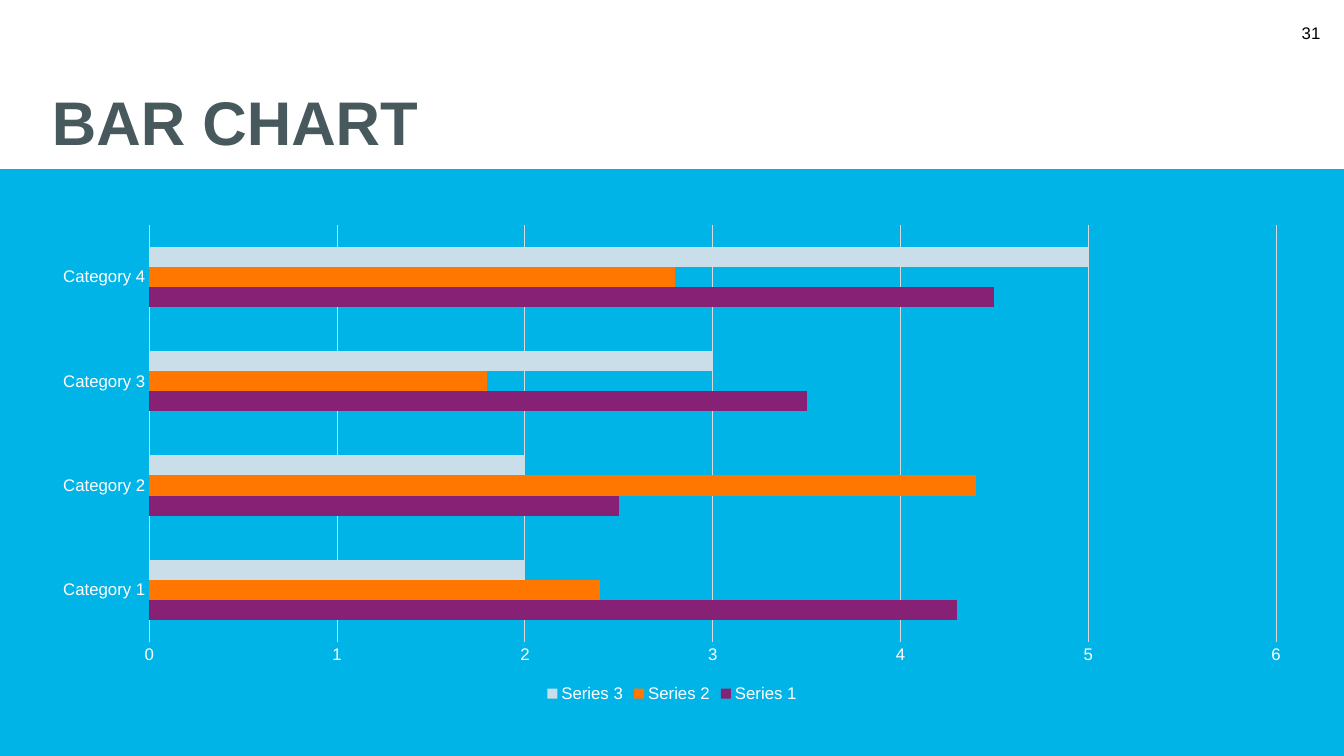
from pptx import Presentation
from pptx.chart.data import CategoryChartData
from pptx.dml.color import RGBColor
from pptx.enum.chart import XL_CHART_TYPE as ChartType, XL_LEGEND_POSITION as LegendPosition
from pptx.enum.chart import XL_TICK_MARK as TickMark
from pptx.enum.shapes import MSO_SHAPE as Preset
from pptx.enum.text import MSO_ANCHOR as Anchor, PP_ALIGN as Align
from pptx.util import Pt

PX = 9525
FONT = "Arial"
WHITE = "FFFFFF"
GRID = "D9D9D9"
SERIES = [
    ("Series 1", (4.3, 2.5, 3.5, 4.5), "872175"),
    ("Series 2", (2.4, 4.4, 1.8, 2.8), "FF7600"),
    ("Series 3", (2, 2, 3, 5), "C9DEE9"),
]


def color(value):
    return RGBColor.from_string(value)


def set_font(font, size, value, bold=False):
    font.name = FONT
    font.size = Pt(size)
    font.bold = bold
    font.color.rgb = color(value)


presentation = Presentation()
presentation.slide_width = 1280 * PX
presentation.slide_height = 720 * PX
slide = presentation.slides.add_slide(presentation.slide_layouts[6])

band = slide.shapes.add_shape(Preset.RECTANGLE, 0, 161 * PX, 1280 * PX, 559 * PX)
band.shadow.inherit = False
band.fill.solid()
band.fill.fore_color.rgb = color("01B4E7")
band.line.fill.background()

texts = [
    ("31", (1223, 12, 44, 38), 12, "000000", False, Align.RIGHT, Anchor.MIDDLE, 5, 1.0),
    ("BAR CHART", (40, 0, 1208, 161), 44, "48595D", True, Align.LEFT, Anchor.BOTTOM, 10, 0.9),
]
for text, box, size, value, bold, align, anchor, bottom, spacing in texts:
    frame = slide.shapes.add_textbox(*(length * PX for length in box)).text_frame
    frame.word_wrap = True
    frame.vertical_anchor = anchor
    frame.margin_top = 0
    frame.margin_top = (bottom if anchor == Anchor.MIDDLE else 0) * PX
    frame.margin_bottom = bottom * PX
    paragraph = frame.paragraphs[0]
    paragraph.alignment = align
    paragraph.line_spacing = spacing
    run = paragraph.add_run()
    run.text = text
    set_font(run.font, size, value, bold)

data = CategoryChartData()
data.categories = [f"Category {number}" for number in range(1, 5)]
for name, values, fill in SERIES:
    data.add_series(name, values)
chart = slide.shapes.add_chart(
    ChartType.BAR_CLUSTERED, 36 * PX, 205 * PX, 1208 * PX, 468 * PX, data
).chart
chart.has_title = False
set_font(chart.font, 10, WHITE)

chart.has_legend = True
chart.legend.position = LegendPosition.BOTTOM
chart.legend.include_in_layout = False
set_font(chart.legend.font, 12, WHITE)

plot = chart.plots[0]
plot.vary_by_categories = False
plot.gap_width = 219
plot.overlap = 0
for series, (name, values, fill) in zip(plot.series, SERIES):
    series.format.fill.solid()
    series.format.fill.fore_color.rgb = color(fill)

category_axis, value_axis = chart.category_axis, chart.value_axis
for axis in (category_axis, value_axis):
    axis.major_tick_mark = TickMark.NONE
    axis.minor_tick_mark = TickMark.NONE
    set_font(axis.tick_labels.font, 12, WHITE)

value_axis.minimum_scale = 0
value_axis.maximum_scale = 6
value_axis.major_unit = 1
value_axis.has_major_gridlines = True
value_axis.format.line.fill.background()
for line in (category_axis.format.line, value_axis.major_gridlines.format.line):
    line.color.rgb = color(GRID)
    line.width = Pt(0.75)

presentation.save("out.pptx")
